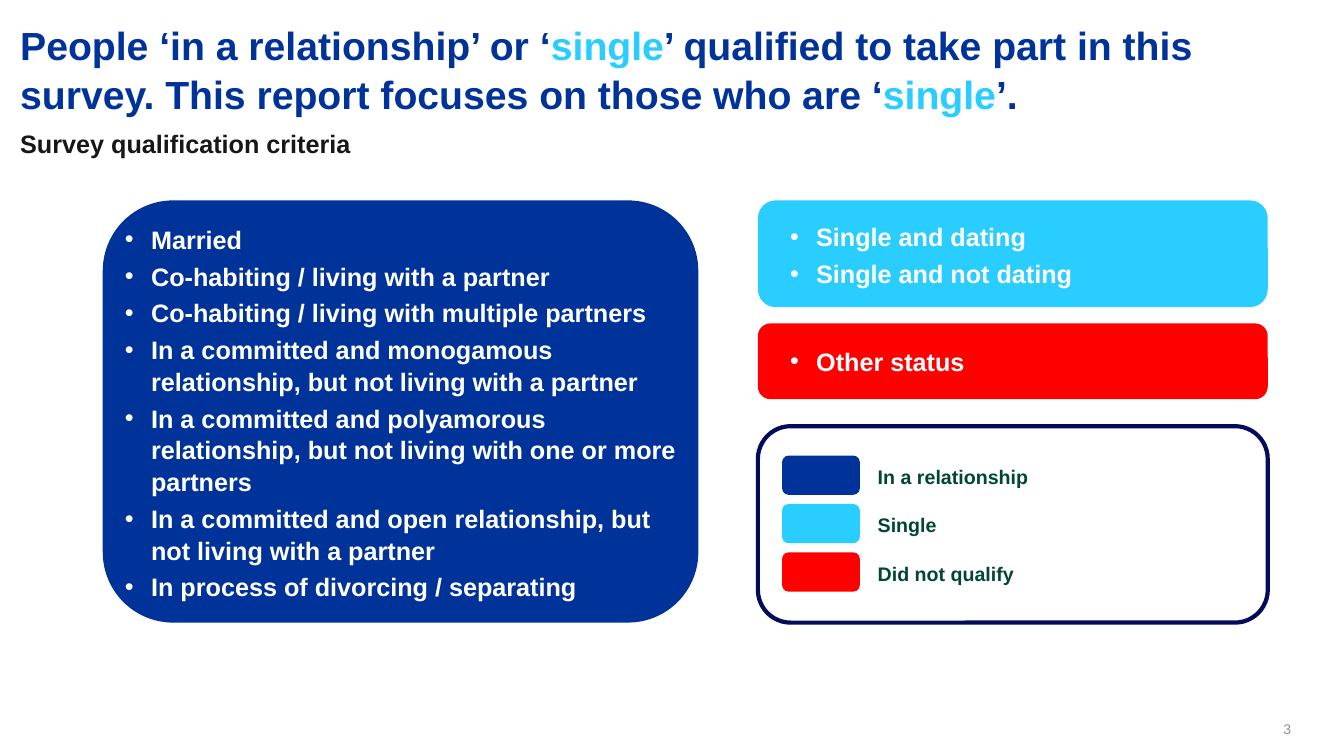
import pptx
import pptx.util
import pptx.dml.color
import pptx.enum.shapes
import pptx.enum.text
import pptx.oxml.ns
import lxml.etree

Cm, Pt = pptx.util.Cm, pptx.util.Pt
Align = pptx.enum.text.PP_ALIGN
Anchor = pptx.enum.text.MSO_ANCHOR

HUES = {
    "blue": "003399", "cyan": "2ACDFF", "red": "FF0000", "navy": "020C5A",
    "green": "014537", "black": "181717", "gray": "8C9491", "white": "FFFFFF",
}


def rgb(hue):
    return pptx.dml.color.RGBColor.from_string(HUES[hue])


class Page:
    font = "Arial"
    lead = 1.05
    hang = Cm(0.66)

    def __init__(self, slide):
        self.home = slide.shapes

    def panel(self, x, y, w, h, fill=None, line=None):
        kind = pptx.enum.shapes.MSO_SHAPE.ROUNDED_RECTANGLE
        shape = self.home.add_shape(kind, Cm(x), Cm(y), Cm(w), Cm(h))
        shape.shadow.inherit = False
        if fill:
            shape.fill.solid()
            shape.fill.fore_color.rgb = rgb(fill)
        else:
            shape.fill.background()
        if line:
            shape.line.color.rgb = rgb(line)
            shape.line.width = Pt(3)
        else:
            shape.line.fill.background()

    def text(self, x, y, w, h, words, size, hue, bold=True,
             anchor=Anchor.TOP, align=Align.LEFT):
        frame = self.home.add_textbox(Cm(x), Cm(y), Cm(w), Cm(h)).text_frame
        frame.word_wrap = True
        frame.vertical_anchor = anchor
        frame.margin_left = frame.margin_right = 0
        frame.margin_top = frame.margin_bottom = 0
        frame.text = words
        for para in frame.paragraphs:
            para.alignment = align
            para.line_spacing = self.lead
            for run in para.runs:
                self.style(run, size, hue, bold)
        return frame

    def style(self, run, size, hue, bold=True):
        run.font.name = self.font
        run.font.size = Pt(size)
        run.font.bold = bold
        run.font.color.rgb = rgb(hue)

    def title(self, x, y, w, h, parts, size):
        frame = self.text(x, y, w, h, "", size, "blue")
        for words, hue in parts:
            run = frame.paragraphs[0].add_run()
            run.text = words
            self.style(run, size, hue)

    def bullets(self, x, y, w, h, items):
        frame = self.text(x, y, w, h, "\n".join(items), 18, "white",
                          anchor=Anchor.MIDDLE)
        qn = pptx.oxml.ns.qn
        for i, para in enumerate(frame.paragraphs):
            if i:
                para.space_before = Pt(3.6)
            props = para._p.get_or_add_pPr()
            props.set("marL", str(self.hang))
            props.set("indent", str(-self.hang))
            tint = lxml.etree.SubElement(props, qn("a:buClr"))
            lxml.etree.SubElement(tint, qn("a:srgbClr"), val=HUES["white"])
            lxml.etree.SubElement(props, qn("a:buFont"), typeface=self.font)
            lxml.etree.SubElement(props, qn("a:buChar"), char="•")

    def legend(self, x, y, step, items):
        outer = self.home
        self.home = outer.add_group_shape().shapes
        for i, (hue, label) in enumerate(items):
            top = y + i * step
            self.panel(x, top, 1.96, 0.99, hue)
            self.text(x + 2.41, top, 9.14, 1.02, label, 14, "green",
                      anchor=Anchor.MIDDLE)
        self.home = outer


def main():
    deck = pptx.Presentation()
    deck.slide_width, deck.slide_height = Cm(33.87), Cm(19.05)
    page = Page(deck.slides.add_slide(deck.slide_layouts[6]))

    # Heading
    page.title(0.51, 0.48, 32.66, 0.91, [
        ("People ‘in a relationship’ or ‘", "blue"),
        ("single", "cyan"),
        ("’ qualified to take part in this survey. "
         "This report focuses on those who are ‘", "blue"),
        ("single", "cyan"),
        ("’.", "blue"),
    ], 28)
    page.text(0.51, 3.2, 31.93, 0.94, "Survey qualification criteria",
              18, "black")

    # In a relationship
    page.panel(2.59, 5.05, 15.01, 10.64, "blue")
    page.bullets(3.15, 8.79, 14.15, 3.2, [
        "Married",
        "Co-habiting / living with a partner",
        "Co-habiting / living with multiple partners",
        "In a committed and monogamous relationship, "
        "but not living with a partner",
        "In a committed and polyamorous relationship, "
        "but not living with one or more partners",
        "In a committed and open relationship, but not living with a partner",
        "In process of divorcing / separating",
    ])

    # Single and other status
    left, wide = 19.1, 12.85
    page.panel(left, 5.05, wide, 2.69, "cyan")
    page.bullets(19.91, 5.64, 12.29, 1.55,
                 ["Single and dating", "Single and not dating"])
    page.panel(left, 8.15, wide, 1.91, "red")
    page.bullets(19.91, 8.43, 12.29, 1.3, ["Other status"])

    # Legend
    page.panel(left, 10.74, wide, 4.95, line="navy")
    page.legend(19.71, 11.48, 1.22, [
        ("blue", "In a relationship"),
        ("cyan", "Single"),
        ("red", "Did not qualify"),
    ])

    # Page number
    page.text(31.04, 17.96, 1.5, 0.61, "3", 10, "gray", bold=False,
              anchor=Anchor.BOTTOM, align=Align.RIGHT)

    deck.save("out.pptx")


if __name__ == "__main__":
    main()
